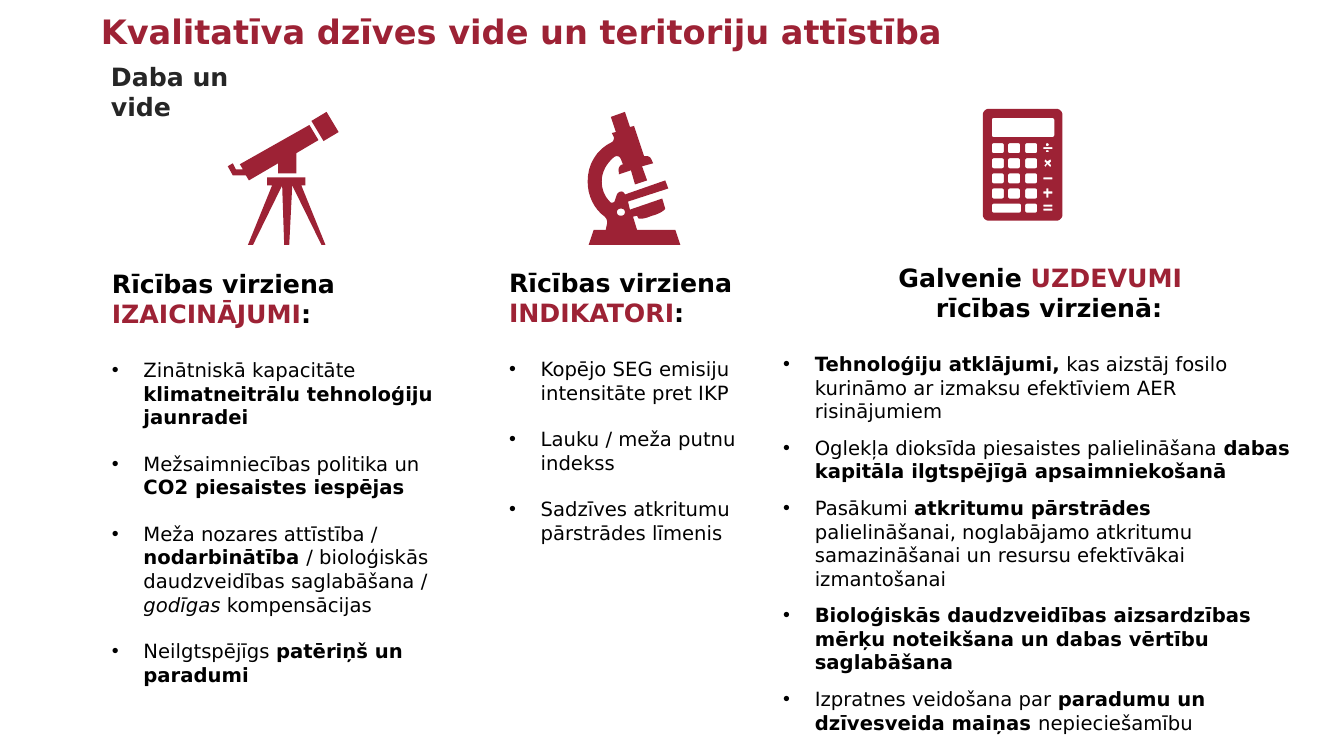
"""Build the slide on nature and environment: three icons above three lists."""

from dataclasses import dataclass
from typing import NamedTuple

from lxml.etree import SubElement
from pptx import Presentation
from pptx.dml.color import RGBColor
from pptx.enum.text import MSO_ANCHOR as Anchor, MSO_AUTO_SIZE as AutoSize, PP_ALIGN as Align
from pptx.oxml.ns import qn
from pptx.util import Inches, Pt

COLUMNS, ROWS = 80, 45
CELL = Inches(1) // 6
FINE = CELL * 6 / 100
DETAIL = 10
CURVE_STEPS = 8
ROUNDNESS = 0.55


@dataclass(frozen=True)
class Theme:
    font: str = "DejaVu Sans"
    accent: RGBColor = RGBColor(0x9D, 0x22, 0x35)
    muted: RGBColor = RGBColor(0x26, 0x26, 0x26)
    ink: RGBColor = RGBColor(0, 0, 0)
    title: int = 24
    heading: int = 18
    item: int = 14
    heading_gap: float = 21
    inset: float = 0.3
    hanging: float = 1.88


THEME = Theme()


class Area(NamedTuple):
    column: float
    row: float
    columns: float
    rows: float


class Span(NamedTuple):
    text: str
    bold: bool = False
    italic: bool = False
    color: RGBColor = THEME.ink


@dataclass(frozen=True)
class Topic:
    area: Area
    heading: list[list[Span]]
    items: list[list[Span]]
    item_gap: float
    align: Align = Align.LEFT
    second_line_shift: float = 0


@dataclass(frozen=True)
class Icon:
    column: float
    row: float
    contours: list[list[tuple]]


def strong(text: str, color: RGBColor = THEME.ink) -> Span:
    return Span(text, bold=True, color=color)


def rounded(x: float, y: float, w: float, h: float, r: float) -> list[tuple]:
    k, right, bottom = r * (1 - ROUNDNESS), x + w, y + h
    return [
        (x + r, y), (right - r, y), (right - k, y, right, y + k, right, y + r),
        (right, bottom - r), (right, bottom - k, right - k, bottom, right - r, bottom),
        (x + r, bottom), (x + k, bottom, x, bottom - k, x, bottom - r),
        (x, y + r), (x, y + k, x + k, y, x + r, y),
    ]


def bar(y: float) -> list[tuple]:
    return [(60, y), (69, y), (69, y + 2), (60, y + 2)]


TELESCOPE = Icon(13.56, 6.66, [
    [(98, 0), (83, 9), (95, 29), (110, 20)],
    [(81, 13), (12, 52), (15, 57), (8, 57), (5, 51), (0, 54), (5, 63), (18, 63), (21, 68),
     (50, 51), (50, 61), (68, 61), (68, 41), (90, 28)],
    [(39, 65), (39, 73), (44, 73), (20, 132), (25, 132), (54, 73), (56, 132), (61, 132),
     (64, 73), (93, 132), (97, 132), (73, 73), (77, 73), (77, 65)],
])
MICROSCOPE = Icon(34.98, 6.66, [
    [(37, 0), (23, 5), (28, 20), (24, 21), (26, 25), (26, 27, 26, 29, 24, 30),
     (9, 37, 0, 52, 0, 69), (0, 83, 6, 96, 17, 104), (19, 106, 20, 109, 19, 112),
     (18, 117), (6, 117), (1, 132), (92, 132), (87, 117), (49, 117), (45, 104), (49, 103),
     (50, 105), (50, 107, 57, 106, 64, 103), (72, 101, 77, 97, 77, 96), (74, 86), (42, 97),
     (40, 89), (80, 76), (77, 68), (37, 82), (36, 78, 31, 78, 29, 82), (27, 88),
     (27, 90, 23, 91, 22, 89), (17, 84, 14, 77, 14, 69), (14, 59, 19, 51, 26, 45),
     (29, 43, 32, 44, 33, 47), (35, 52), (31, 53, 30, 57, 31, 60), (31, 62), (43, 58),
     (47, 72), (59, 68), (54, 54), (65, 51), (64, 49), (63, 45, 60, 43, 56, 44),
     (46, 14), (42, 15)],
    rounded(29, 96, 8, 7, 3.5),
])
CALCULATOR = Icon(58.5, 6.48, [
    rounded(0, 0, 79, 111, 6),
    rounded(9, 9, 62, 19, 2),
    *(rounded(x, 34 + 15 * row, 12, 10, 2) for row in range(4) for x in (9, 25, 42)),
    rounded(9, 94, 29, 9, 2),
    rounded(42, 94, 12, 9, 2),
    rounded(62.5, 34, 3, 3, 1.5),
    rounded(62.5, 41, 3, 2, 1),
    *(bar(y) for y in (38, 68, 95, 99)),
    [(62, 50), (64, 52), (67, 50), (68, 52), (66, 54), (68, 56), (67, 58), (64, 55),
     (62, 58), (61, 56), (63, 54), (61, 52)],
    [(63, 79), (65, 79), (65, 82), (69, 82), (69, 84), (65, 84), (65, 88), (63, 88),
     (63, 84), (60, 84), (60, 82), (63, 82)],
])

CHALLENGES = Topic(
    Area(6.36, 15.66, 21, 30.12),
    [[strong("Rīcības virziena "), strong("IZAICINĀJUMI", THEME.accent), strong(":")]],
    [[Span("Zinātniskā kapacitāte "), strong("klimatneitrālu tehnoloģiju jaunradei")],
     [Span("Mežsaimniecības politika un "), strong("CO2 piesaistes iespējas")],
     [Span("Meža nozares attīstība / "), strong("nodarbinātība "),
      Span("/ bioloģiskās daudzveidības saglabāšana / "), Span("godīgas", italic=True),
      Span(" kompensācijas")],
     [Span("Neilgtspējīgs "), strong("patēriņš un paradumi")]],
    item_gap=16.5,
)
INDICATORS = Topic(
    Area(30, 15.6, 14.4, 17.34),
    [[strong("Rīcības virziena "), strong("INDIKATORI", THEME.accent), strong(":")]],
    [[Span("Kopējo SEG emisiju intensitāte pret IKP")],
     [Span("Lauku / meža putnu indekss")],
     [Span("Sadzīves atkritumu pārstrādes līmenis")]],
    item_gap=16.5,
)
TASKS = Topic(
    Area(46.32, 15.3, 31.2, 29.1),
    [[strong("Galvenie "), strong("UZDEVUMI", THEME.accent)], [strong("rīcības virzienā:")]],
    [[strong("Tehnoloģiju atklājumi,"),
      Span(" kas aizstāj fosilo kurināmo ar izmaksu efektīviem AER risinājumiem")],
     [Span("Oglekļa dioksīda piesaistes palielināšana "),
      strong("dabas kapitāla ilgtspējīgā apsaimniekošanā")],
     [Span("Pasākumi "), strong("atkritumu pārstrādes "),
      Span("palielināšanai, noglabājamo atkritumu samazināšanai un resursu efektīvākai izmantošanai")],
     [strong("Bioloģiskās daudzveidības aizsardzības mērķu noteikšana un dabas vērtību saglabāšana")],
     [Span("Izpratnes veidošana par "), strong("paradumu un dzīvesveida maiņas "),
      Span("nepieciešamību")]],
    item_gap=9.4, align=Align.CENTER, second_line_shift=1.06,
)


def place(holder, area: Area, wrap: bool = True):
    holder.left, holder.top, holder.width, holder.height = (round(n * CELL) for n in area)
    frame = holder.text_frame
    frame.auto_size, frame.word_wrap, frame.vertical_anchor = AutoSize.NONE, wrap, Anchor.TOP
    frame.margin_left = frame.margin_right = round(THEME.inset * CELL)
    frame.margin_top = frame.margin_bottom = round(THEME.inset * CELL)
    return frame


def write(paragraph, spans: list[Span], size: int, before: float = 0,
          align: Align = Align.LEFT, left: float = 0, bullet: bool = False) -> None:
    paragraph.alignment = align
    paragraph.space_before, paragraph.space_after = Pt(before), Pt(0)
    for span in spans:
        run = paragraph.add_run()
        run.text = span.text
        font = run.font
        font.name, font.size, font.bold, font.italic = THEME.font, Pt(size), span.bold, span.italic
        font.color.rgb = span.color
    margin = round(left * CELL)
    properties = paragraph._p.get_or_add_pPr()
    properties.set("marL", str(margin))
    properties.set("indent", str(-margin if bullet else 0))
    if bullet:
        SubElement(properties, qn("a:buFont")).set("typeface", "Arial")
        SubElement(properties, qn("a:buChar")).set("char", "•")
    else:
        SubElement(properties, qn("a:buNone"))


def fill_topic(holder, topic: Topic) -> None:
    frame = place(holder, topic.area)
    for number, line in enumerate(topic.heading):
        paragraph = frame.add_paragraph() if number else frame.paragraphs[0]
        write(paragraph, line, THEME.heading, align=topic.align,
              left=number * topic.second_line_shift)
    for number, item in enumerate(topic.items):
        gap = topic.item_gap if number else THEME.heading_gap
        write(frame.add_paragraph(), item, THEME.item, gap, left=THEME.hanging, bullet=True)


def flatten(contour: list[tuple]) -> list[tuple[float, float]]:
    points = [contour[0]]
    for step in contour[1:]:
        if len(step) == 2:
            points.append(step)
            continue
        start, a, b, end = points[-1], step[:2], step[2:4], step[4:]
        for t in (n / CURVE_STEPS for n in range(1, CURVE_STEPS + 1)):
            u = 1 - t
            points.append(tuple(u**3 * p + 3 * u * u * t * q + 3 * u * t * t * r + t**3 * s
                                for p, q, r, s in zip(start, a, b, end)))
    return [(x * DETAIL, y * DETAIL) for x, y in points]


def draw_icon(slide, icon: Icon) -> None:
    first, *others = map(flatten, icon.contours)
    outline = slide.shapes.build_freeform(*first[0], scale=FINE / DETAIL)
    outline.add_line_segments(first[1:], close=True)
    for contour in others:
        outline.move_to(*contour[0])
        outline.add_line_segments(contour[1:], close=True)
    silhouette = outline.convert_to_shape(round(icon.column * CELL), round(icon.row * CELL))
    silhouette.shadow.inherit = False
    silhouette.fill.solid()
    silhouette.fill.fore_color.rgb = THEME.accent
    silhouette.line.fill.background()


def main() -> None:
    deck = Presentation()
    deck.slide_width, deck.slide_height = COLUMNS * CELL, ROWS * CELL
    slide = deck.slides.add_slide(deck.slide_layouts[4])
    title, subtitle, *lists = slide.placeholders
    write(place(title, Area(5.7, 0.36, 50.7, 3), wrap=False).paragraphs[0],
          [strong("Kvalitatīva dzīves vide un teritoriju attīstība", THEME.accent)], THEME.title)
    write(place(subtitle, Area(6.3, 3.36, 11.7, 2.4), wrap=False).paragraphs[0],
          [strong("Daba un vide", THEME.muted)], THEME.heading)
    for holder, topic in zip(lists, (CHALLENGES, INDICATORS, TASKS)):
        fill_topic(holder, topic)
    for icon in (TELESCOPE, MICROSCOPE, CALCULATOR):
        draw_icon(slide, icon)
    deck.save("out.pptx")


if __name__ == "__main__":
    main()
